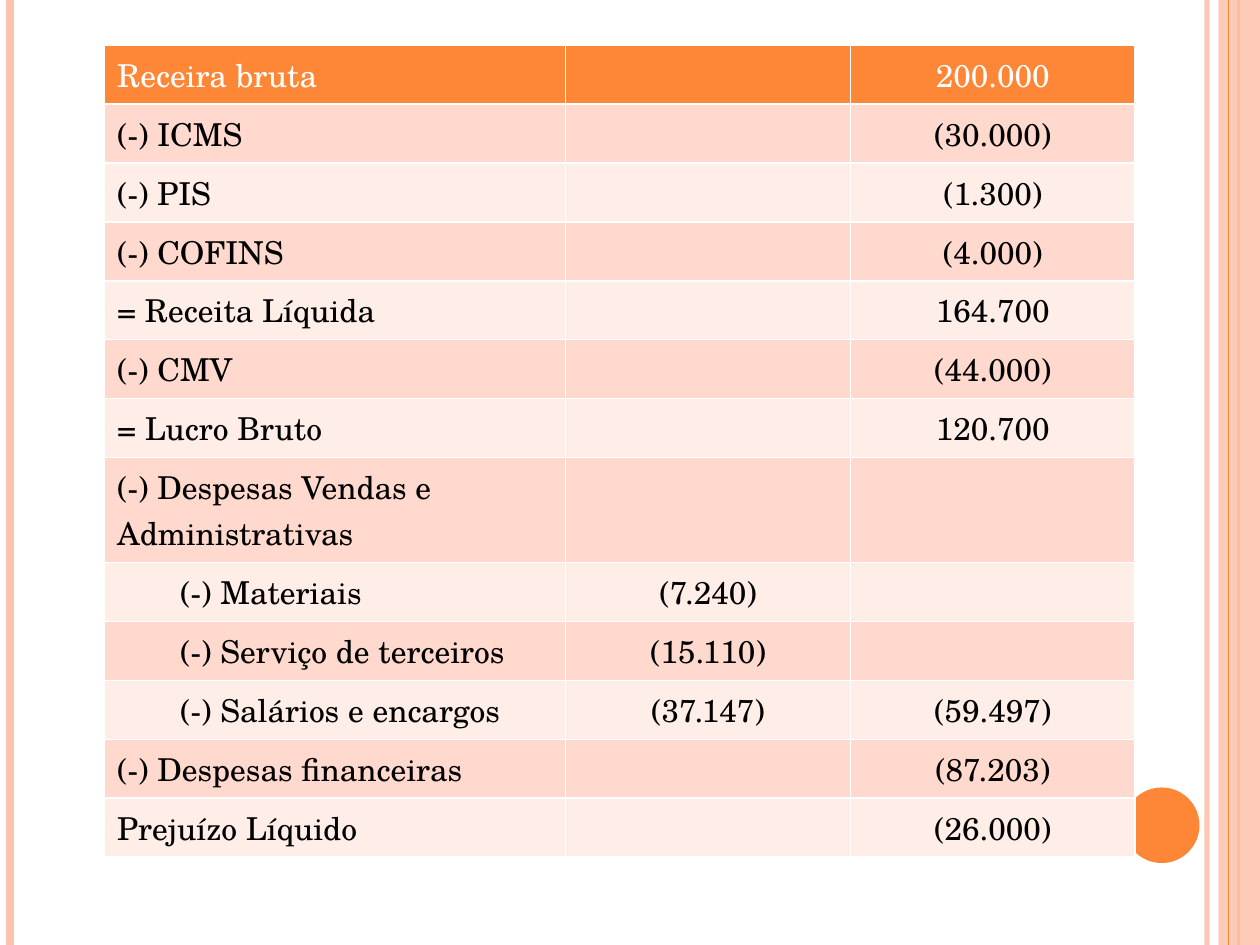
from lxml import etree
from pptx import Presentation
from pptx import util as u
from pptx.dml.color import RGBColor
from pptx.enum import shapes, text
from pptx.oxml.ns import qn

W, H = 10, 7.5
FONT = "TeX Gyre Schola"
ORANGE, PEACH, WHITE, BLACK = "FE8637", "FEC3AE", "FFFFFF", "000000"
BANDS = ["FFEDE8", "FFD9CE"]
COLUMNS = [3.66, 2.26, 2.26]
INDENTED = ["(-) Materiais", "(-) Serviço de terceiros", "(-) Salários e encargos"]
ROWS = [
    ("Receira bruta", "", "200.000"),
    ("(-) ICMS", "", "(30.000)"),
    ("(-) PIS", "", "(1.300)"),
    ("(-) COFINS", "", "(4.000)"),
    ("= Receita Líquida", "", "164.700"),
    ("(-) CMV", "", "(44.000)"),
    ("= Lucro Bruto", "", "120.700"),
    ("(-) Despesas Vendas e Administrativas", "", ""),
    ("(-) Materiais", "(7.240)", ""),
    ("(-) Serviço de terceiros", "(15.110)", ""),
    ("(-) Salários e encargos", "(37.147)", "(59.497)"),
    ("(-) Despesas financeiras", "", "(87.203)"),
    ("Prejuízo Líquido", "", "(26.000)"),
]


def paint(fill, color, alpha=100):
    """Give a fill a solid hex colour, with an opacity in percent."""
    fill.solid()
    fill.fore_color.rgb = RGBColor.from_string(color)
    if alpha < 100:
        clr = next(fill._xPr.iter(qn("a:srgbClr")))
        etree.SubElement(clr, qn("a:alpha")).set("val", str(alpha * 1000))


def add_rule(s, x, color, width, alpha=100):
    """Draw a vertical line over the full slide height."""
    ln = s.shapes.add_connector(shapes.MSO_CONNECTOR.STRAIGHT,
                                u.Inches(x), 0, u.Inches(x), u.Inches(H))
    ln.line.width = u.Pt(width)
    paint(ln.line.fill, color, alpha)
    etree.SubElement(ln._element.spPr, qn("a:effectLst"))


def add_solid(s, kind, box, color, alpha=100):
    """Draw a borderless shape in a box."""
    sp = s.shapes.add_shape(kind, *map(u.Inches, box))
    sp.shadow.inherit = False
    sp.line.fill.background()
    paint(sp.fill, color, alpha)


def add_frame(s):
    """Draw the stripes and the disc at the slide's edges."""
    add_rule(s, W - 0.42, PEACH, 3, 93)
    add_rule(s, 0.08, PEACH, 4.5)
    add_rule(s, W - 0.17, ORANGE, 1.5)
    add_solid(s, shapes.MSO_SHAPE.RECTANGLE, (W - 0.33, 0, 0.33, H), PEACH, 87)
    add_rule(s, W - 0.25, ORANGE, 0.75)
    add_solid(s, shapes.MSO_SHAPE.OVAL, (8.92, 6.25, 0.6, 0.6), ORANGE)


def write_cell(cell, value, color, centred):
    """Write one value in a table cell."""
    p = cell.text_frame.paragraphs[0]
    if centred:
        p.alignment = text.PP_ALIGN.CENTER
    if value in INDENTED:
        p.level = 1
        p._p.get_or_add_pPr().set("marL", str(u.Inches(0.5)))
    r = p.add_run()
    r.text = value
    r.font.name, r.font.size, r.font.bold = FONT, u.Pt(18), False
    r.font.color.rgb = RGBColor.from_string(color)


def add_statement(s, left, top, row_height):
    """Build the income statement table."""
    table = s.shapes.add_table(
        len(ROWS), len(COLUMNS), u.Inches(left), u.Inches(top),
        u.Inches(sum(COLUMNS)), u.Inches(row_height * len(ROWS))).table
    for col, width in zip(table.columns, COLUMNS):
        col.width = u.Inches(width)
    for i, row in enumerate(ROWS):
        table.rows[i].height = u.Inches(row_height)
        for j, value in enumerate(row):
            cell = table.cell(i, j)
            paint(cell.fill, BANDS[i % 2] if i else ORANGE)
            if value:
                write_cell(cell, value, BLACK if i else WHITE, j > 0)


def main():
    """Build and save the slide."""
    prs = Presentation()
    prs.slide_width, prs.slide_height = u.Inches(W), u.Inches(H)
    s = prs.slides.add_slide(prs.slide_layouts[6])
    paint(s.background.fill, WHITE)
    add_frame(s)
    add_statement(s, 0.83, 0.36, 0.41)
    prs.save("out.pptx")


if __name__ == "__main__":
    main()
